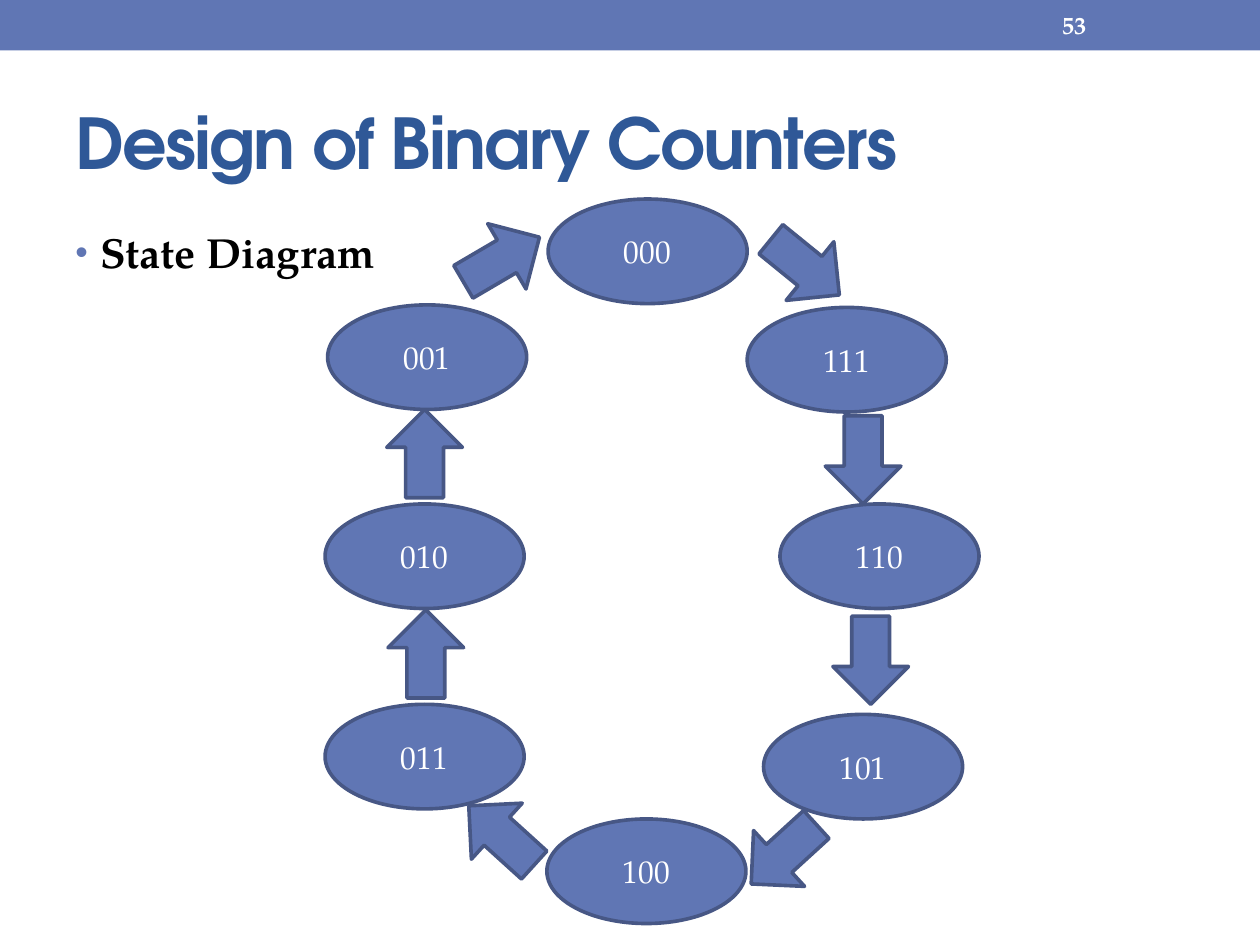
from lxml import etree
from pptx import Presentation
from pptx.dml.color import RGBColor
from pptx.enum.shapes import MSO_SHAPE
from pptx.enum.text import MSO_ANCHOR, PP_ALIGN
from pptx.oxml.ns import qn
from pptx.util import Inches, Pt

RECT, OVAL, ARROW = MSO_SHAPE.RECTANGLE, MSO_SHAPE.OVAL, MSO_SHAPE.RIGHT_ARROW
TOP, MIDDLE = MSO_ANCHOR.TOP, MSO_ANCHOR.MIDDLE
LEFT, CENTER = PP_ALIGN.LEFT, PP_ALIGN.CENTER
HEAD_FONT, BODY_FONT = "TeX Gyre Adventor", "TeX Gyre Pagella"
COLORS = {"blue": "6076B4", "outline": "475785", "title": "2F5897",
          "black": "000000", "white": "FFFFFF"}

prs = Presentation()
prs.slide_width, prs.slide_height = Inches(10), Inches(7.5)
s = prs.slides.add_slide(prs.slide_layouts[6])


def add_text(sp, text, size=18, font=BODY_FONT, color="white", bold=False,
             align=LEFT, anchor=MIDDLE):
    tf = sp.text_frame
    tf.word_wrap = True
    tf.vertical_anchor = anchor
    p = tf.paragraphs[0]
    p.alignment = align
    r = p.add_run()
    r.text = text
    r.font.size = Pt(size)
    r.font.name = font
    r.font.bold = bold
    r.font.color.rgb = RGBColor.from_string(COLORS[color])
    return p


def add_figure(kind, x, y, w, h, outline=True):
    sp = s.shapes.add_shape(kind, Inches(x), Inches(y), Inches(w), Inches(h))
    sp.shadow.inherit = False
    sp.fill.solid()
    sp.fill.fore_color.rgb = RGBColor.from_string(COLORS["blue"])
    if outline:
        sp.line.color.rgb = RGBColor.from_string(COLORS["outline"])
        sp.line.width = Pt(2.08)
    else:
        sp.line.fill.background()
    return sp


add_figure(RECT, 0, 0, 10, 0.4, outline=False)

title = s.shapes.add_textbox(Inches(0.5), Inches(0.58), Inches(9), Inches(1.08))
p = add_text(title, "Design of Binary Counters", size=40, font=HEAD_FONT,
             color="title", bold=True)
p.runs[0].font._element.set("spc", "-100")

body = s.shapes.add_textbox(Inches(0.5), Inches(1.75), Inches(9), Inches(5.33))
p = add_text(body, "State Diagram", size=24, color="black", bold=True, anchor=TOP)
p.space_before = Pt(4.8)
pPr = p._p.get_or_add_pPr()
pPr.set("marL", str(Inches(0.2)))
pPr.set("indent", str(Inches(-0.2)))
buClr = etree.SubElement(pPr, qn("a:buClr"))
etree.SubElement(buClr, qn("a:srgbClr"), val=COLORS["blue"])
etree.SubElement(pPr, qn("a:buSzPct"), val="85000")
etree.SubElement(pPr, qn("a:buFont"), typeface="Arial")
etree.SubElement(pPr, qn("a:buChar"), char="•")

number = s.shapes.add_textbox(Inches(8.33), Inches(0.02), Inches(1.17), Inches(0.36))
add_text(number, "53", size=14, bold=True)

states = [("000", 4.35, 1.58), ("111", 5.93, 2.44), ("110", 6.19, 4),
          ("101", 6.06, 5.67), ("100", 4.34, 6.5), ("011", 2.58, 5.59),
          ("010", 2.58, 4), ("001", 2.6, 2.42)]
for label, x, y in states:
    add_text(add_figure(OVAL, x, y, 1.58, 0.83), label, align=CENTER)

arrows = [(6.04, 1.82, 39.1), (6.5, 3.35, 90), (6.56, 4.94, 90),
          (5.87, 6.48, 137.6), (3.63, 6.33, 222.2), (3.03, 4.89, 270),
          (3.02, 3.3, 270), (3.63, 1.76, 329.6)]
for x, y, angle in arrows:
    add_figure(ARROW, x, y, 0.7, 0.6).rotation = angle

prs.save("out.pptx")
